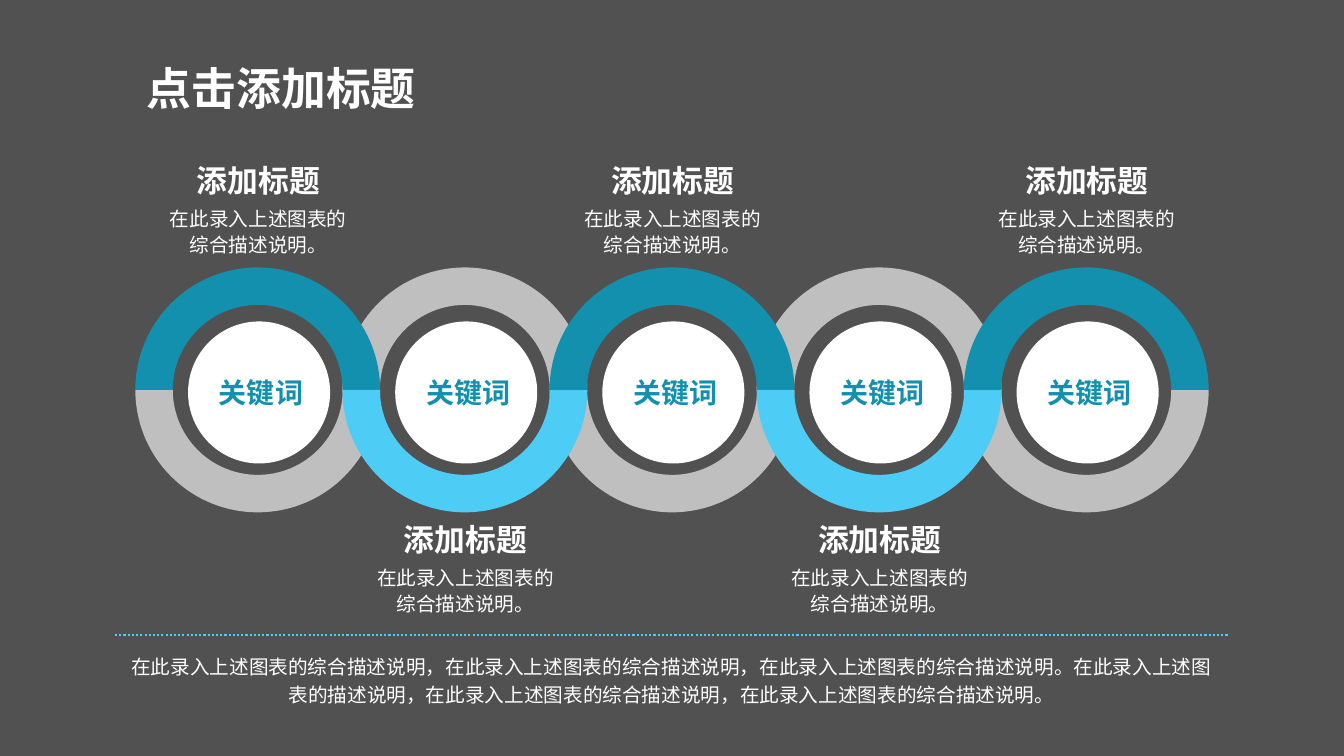
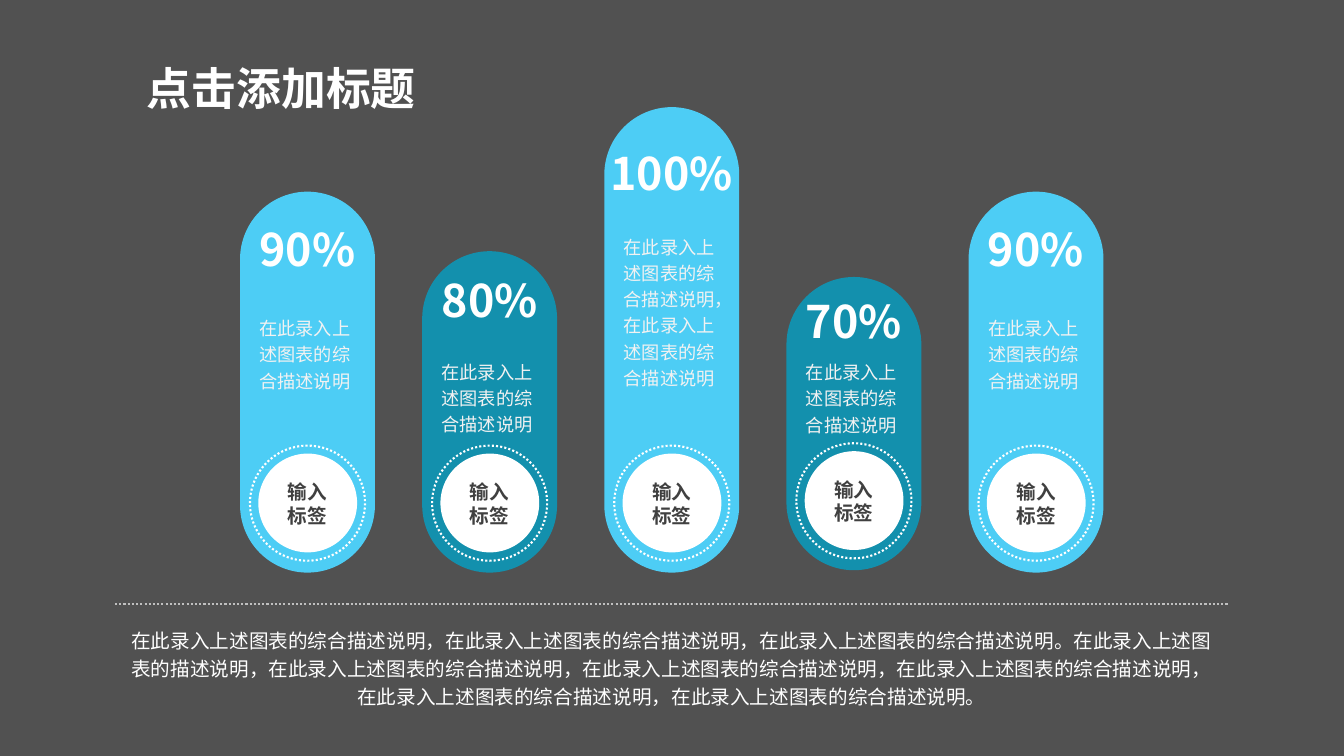
from lxml import etree
from pptx import Presentation
from pptx.dml.color import RGBColor
from pptx.enum.dml import MSO_LINE
from pptx.enum.shapes import MSO_CONNECTOR, MSO_SHAPE
from pptx.enum.text import MSO_ANCHOR, PP_ALIGN
from pptx.oxml.ns import qn
from pptx.util import Cm, Pt

ARC, OVAL, PILL = MSO_SHAPE.BLOCK_ARC, MSO_SHAPE.OVAL, MSO_SHAPE.ROUNDED_RECTANGLE
STRAIGHT, DOTS = MSO_CONNECTOR.STRAIGHT, MSO_LINE.ROUND_DOT
LEFT, CENTER = PP_ALIGN.LEFT, PP_ALIGN.CENTER
TOP, MIDDLE = MSO_ANCHOR.TOP, MSO_ANCHOR.MIDDLE

BACKDROP, WHITE, PALE, GRAY, INK = "515151", "FFFFFF", "F2F2F2", "BFBFBF", "404040"
TEAL, SKY = "1390AD", "4DCDF5"
FONT, TITLE_FONT = "Noto Sans CJK SC", "Arial"
INSETS = (0.25, 0.13, 0.25, 0.13)  # left, top, right, bottom in cm
NO_INSETS = (0, 0, 0, 0)

CLAUSE = "在此录入上述图表的综合描述说明"
SUMMARY = f"{CLAUSE}，{CLAUSE}，{CLAUSE}。在此录入上述图表的描述说明"


def color(value):
    return RGBColor.from_string(value)


def write(shape, text, size, ink, bold=False, align=CENTER, anchor=TOP,
          spacing=1.0, wrap=True, insets=INSETS, font=FONT):
    frame = shape.text_frame
    frame.word_wrap = wrap
    frame.vertical_anchor = anchor
    frame.margin_left, frame.margin_top, frame.margin_right, frame.margin_bottom = map(Cm, insets)
    para = frame.paragraphs[0]
    para.alignment = align
    para.line_spacing = spacing
    span = para.add_run()
    span.text = text
    span.font.name = font
    span.font.size = Pt(size)
    span.font.bold = bold
    span.font.color.rgb = color(ink)
    east_asian = etree.SubElement(span.font._element, qn("a:ea"))
    east_asian.set("typeface", FONT)


def add_text(page, left, top, width, height, text, size, ink, **style):
    box = page.shapes.add_textbox(Cm(left), Cm(top), Cm(width), Cm(height))
    write(box, text, size, ink, **style)


def add_figure(page, kind, left, top, width, height, fill=None):
    shape = page.shapes.add_shape(kind, Cm(left), Cm(top), Cm(width), Cm(height))
    shape.shadow.inherit = False
    if fill:
        shape.fill.solid()
        shape.fill.fore_color.rgb = color(fill)
        shape.line.fill.background()
    else:
        shape.fill.background()
    return shape


def dot_line(line, ink):
    line.color.rgb = color(ink)
    line.width = Pt(1.5)
    line.dash_style = DOTS


def add_page(deck):
    page = deck.slides.add_slide(deck.slide_layouts[6])
    page.background.fill.solid()
    page.background.fill.fore_color.rgb = color(BACKDROP)
    add_text(page, 3.45, 1.4, 7.34, 1.63, "点击添加标题", 32, WHITE,
             bold=True, align=LEFT, wrap=False, font=TITLE_FONT)
    return page


def add_footer(page, top, gap, height, text, ink):
    rule = page.shapes.add_connector(STRAIGHT, Cm(2.9), Cm(top), Cm(30.96), Cm(top))
    dot_line(rule.line, ink)
    etree.SubElement(rule._element.spPr, qn("a:effectLst"))
    add_text(page, 2.87, top + gap, 28.12, height, text, 14, WHITE, spacing=1.2)


def add_half_ring(page, left, top, size, fill, lower):
    arc = add_figure(page, ARC, left, top, size, size, fill)
    arc.adjustments[2] = 0.153
    if lower:
        arc.rotation = 180


def add_caption(page, left, top):
    add_text(page, left + 1.27, top, 3.66, 1.19, "添加标题", 22, WHITE, bold=True, wrap=False)
    add_text(page, left + 0.4, top + 1.09, 5.4, 1.57, CLAUSE + "。", 14, WHITE, spacing=1.1)


def add_ring_chain(page, left, top):
    size, pitch = 6.17, 5.22
    rings = [(left + number * pitch, number % 2 == 1) for number in range(5)]
    # Gray halves lie behind the coloured wave
    for ring_left, lower in rings:
        add_half_ring(page, ring_left, top, size, GRAY, not lower)
    for ring_left, lower in rings:
        add_half_ring(page, ring_left, top, size, SKY if lower else TEAL, lower)
    # Keyword discs and captions
    for ring_left, lower in rings:
        disc = add_figure(page, OVAL, ring_left + 1.33, top + 1.36, 3.58, 3.58, WHITE)
        write(disc, "关键词", 20, TEAL, bold=True, anchor=MIDDLE, spacing=0.9,
              insets=(0.1, 0.1, 0, 0))
        add_caption(page, ring_left, top + 6.25 if lower else top - 2.8)


def add_pill(page, left, bottom, height, fill, percent, percent_drop, text, text_drop):
    width, overhang = 3.4, 0.3
    top = bottom - height
    pill = add_figure(page, PILL, left, top, width, height, fill)
    pill.adjustments[0] = 0.5
    # Label disc with dotted ring
    add_figure(page, OVAL, left + 0.46, bottom - 3, 2.49, 2.49, WHITE)
    halo = add_figure(page, OVAL, left + 0.25, bottom - 3.2, 2.9, 2.9)
    dot_line(halo.line, WHITE)
    add_text(page, left + 1.1, bottom - 2.34, 1.2, 1.19, "输入标签", 14, INK,
             bold=True, anchor=MIDDLE, insets=NO_INSETS)
    # Value and description; the value box is wider than the pill to stay on one line
    add_text(page, left - overhang, top + percent_drop, width + 2 * overhang, 1.37,
             percent, 32, WHITE, bold=True, wrap=False, insets=NO_INSETS)
    add_text(page, left + 0.24, top + text_drop, 2.96, 2.26, text, 13, PALE,
             align=LEFT, spacing=1.2)


def add_pill_row(page, left, bottom):
    outer = (bottom, 9.6, SKY, "90%", 0.75, CLAUSE, 2.93)
    pills = [
        outer,
        (bottom, 8.1, TEAL, "80%", 0.55, CLAUSE, 2.53),
        (bottom, 11.73, SKY, "100%", 0.97, f"{CLAUSE}，{CLAUSE}", 3.01),
        (bottom - 0.06, 7.39, TEAL, "70%", 0.41, CLAUSE, 1.89),
        outer,
    ]
    for number, pill in enumerate(pills):
        add_pill(page, left + number * 4.59, *pill)


def main():
    deck = Presentation()
    deck.slide_width, deck.slide_height = Cm(33.87), Cm(19.05)

    # Chain of rings
    page = add_page(deck)
    add_ring_chain(page, 3.41, 6.74)
    add_footer(page, 16, 0.26, 1.7, SUMMARY + f"，{CLAUSE}" * 2 + "。", SKY)

    # Row of percentage pills
    page = add_page(deck)
    add_pill_row(page, 6.05, 14.43)
    add_footer(page, 15.21, 0.39, 2.41, SUMMARY + f"，{CLAUSE}" * 5 + "。", GRAY)

    deck.save("out.pptx")


if __name__ == "__main__":
    main()
